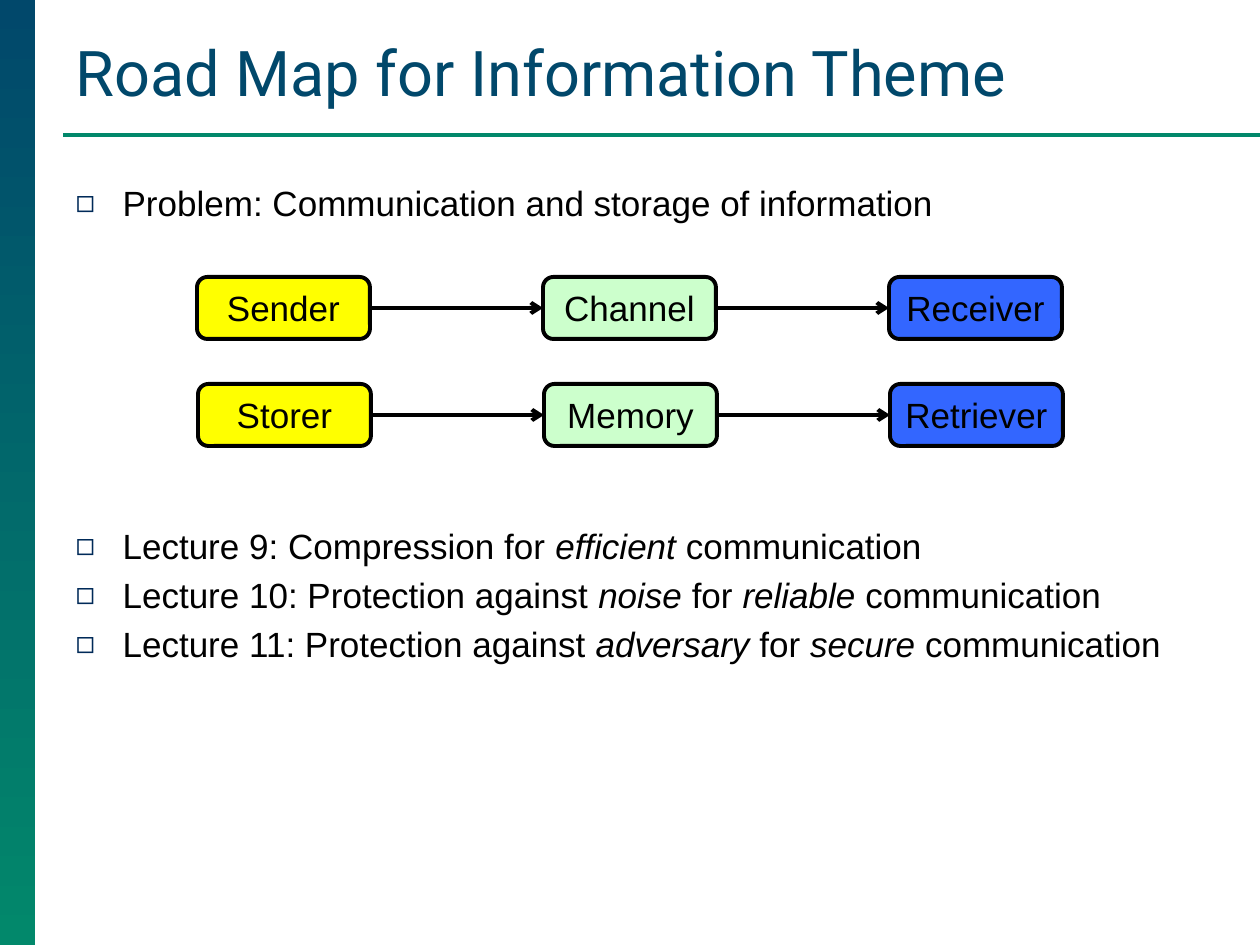
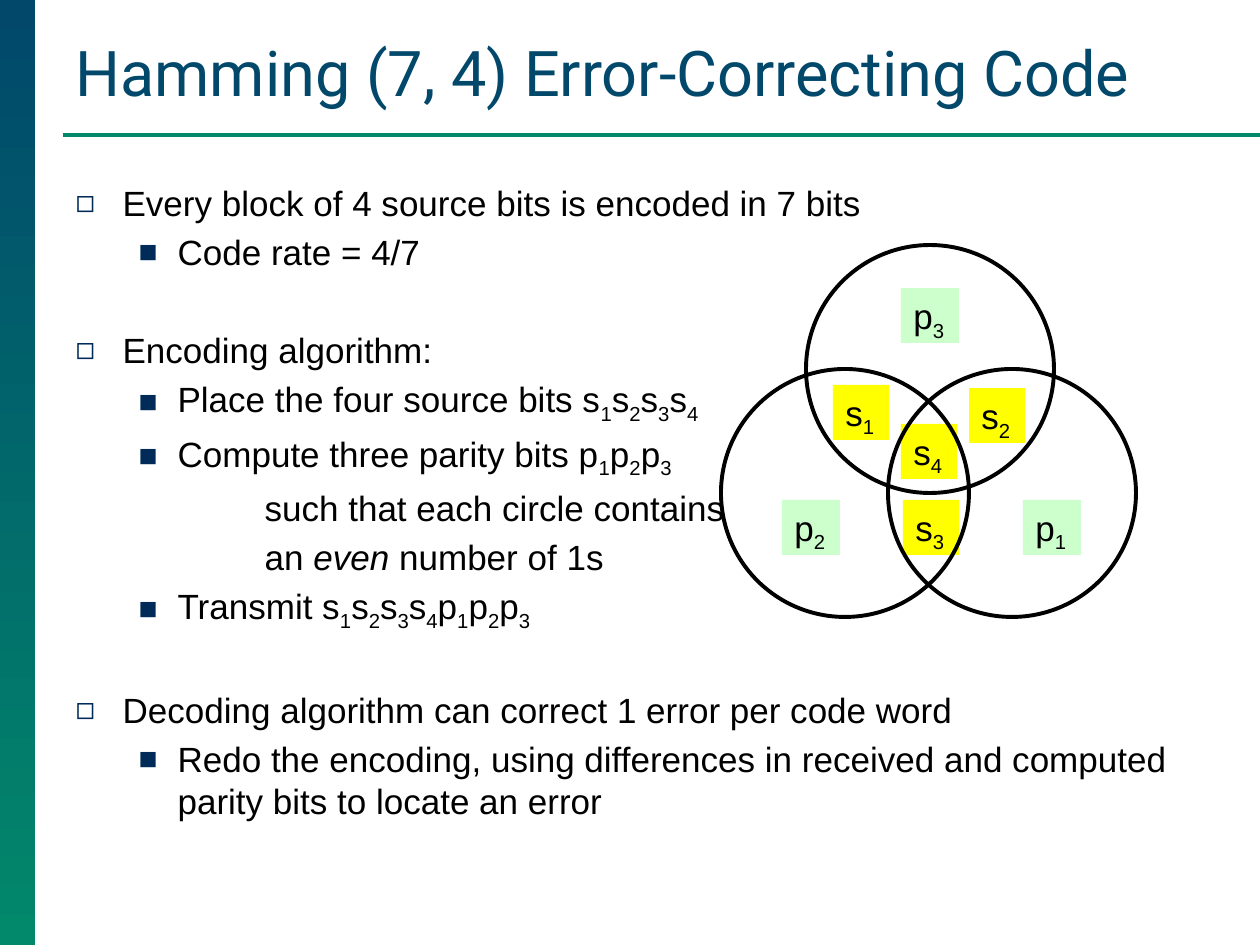
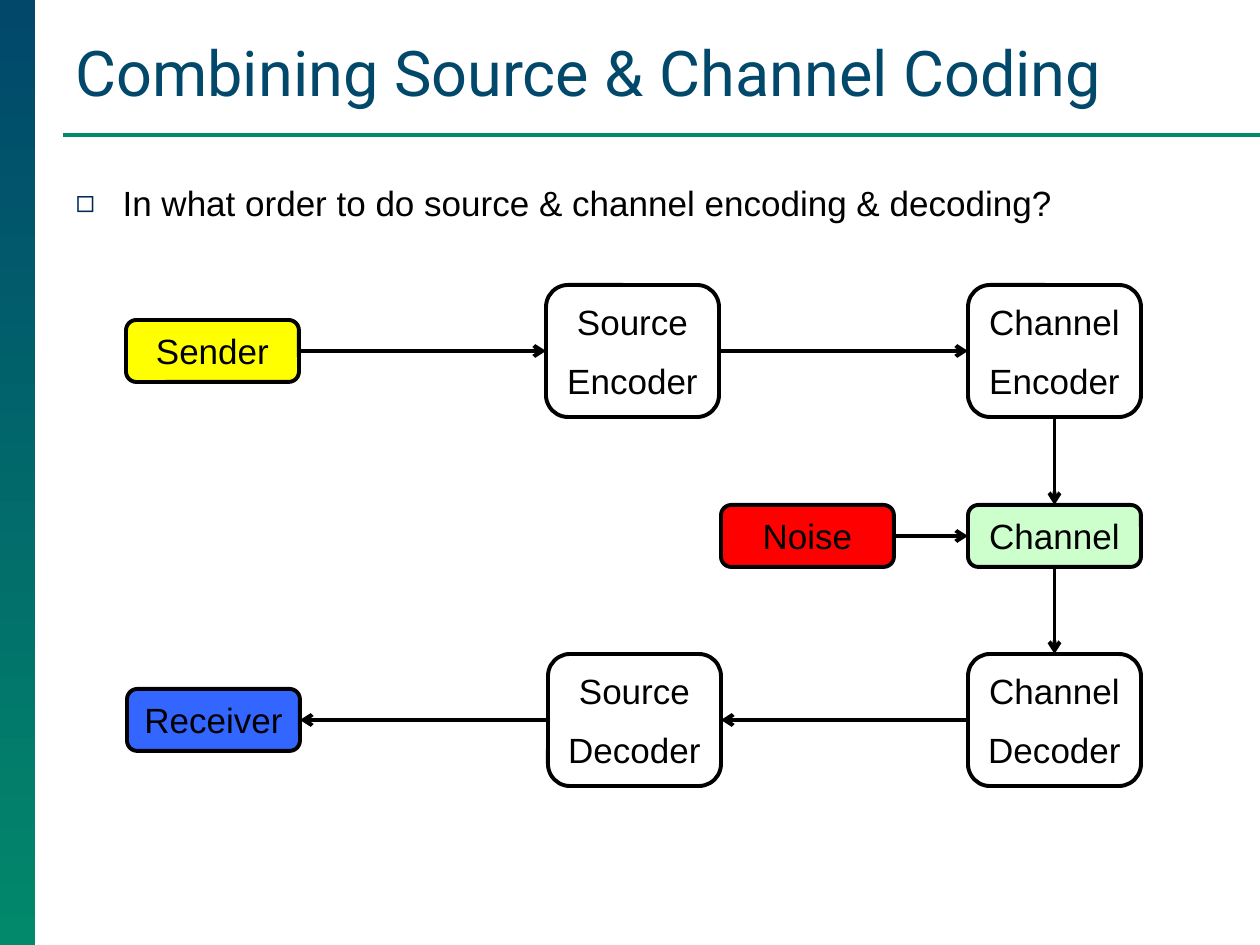
import pptx
import pptx.util
import pptx.dml.color
import pptx.enum.dml
import pptx.enum.shapes
import pptx.enum.text
import pptx.oxml.ns
from dataclasses import dataclass
from lxml import etree

SHAPE = pptx.enum.shapes.MSO_SHAPE
ANCHOR = pptx.enum.text.MSO_ANCHOR
ALIGN = pptx.enum.text.PP_ALIGN
qn = pptx.oxml.ns.qn


@dataclass(frozen=True)
class Theme:
    navy: str = "01486B"
    green: str = "02886B"
    mark: str = "002A58"
    black: str = "000000"
    white: str = "FFFFFF"
    yellow: str = "FFFF00"
    mint: str = "CCFFCC"
    blue: str = "3366FF"
    red: str = "FF0000"
    head: str = "Roboto"
    face: str = "Arial"
    big: int = 36
    size: int = 20
    line: float = 2.25
    pitch: int = 28   # points from one list line to the next
    tight: int = 4    # space before a list line
    loose: int = 10   # space between lines in a box


T = Theme()

# ---- Content ----
# In text, *word* is italic and _1_ is a subscript.
# List lines: kind, text, empty lines above.
ROAD = dict(
    title="Road Map for Information Theme",
    list=[
        ("main", "Problem: Communication and storage of information", 0),
        ("main", "Lecture 9: Compression for *efficient* communication", 6),
        ("main", "Lecture 10: Protection against *noise* for *reliable* communication", 0),
        ("main", "Lecture 11: Protection against *adversary* for *secure* communication", 0),
    ],
    rows=[(197, 277, ("Sender", "Channel", "Receiver")),
          (198, 384, ("Storer", "Memory", "Retriever"))],
)
CODE = dict(
    title="Hamming (7, 4) Error-Correcting Code",
    list=[
        ("main", "Every block of 4 source bits is encoded in 7 bits", 0),
        ("sub", "Code rate = 4/7", 0),
        ("main", "Encoding algorithm:", 1),
        ("sub", "Place the four source bits s_1_s_2_s_3_s_4_", 0),
        ("sub", "Compute three parity bits p_1_p_2_p_3_", 0),
        ("more", "such that each circle contains", 0),
        ("more", "an *even* number of 1s", 0),
        ("sub", "Transmit s_1_s_2_s_3_s_4_p_1_p_2_p_3_", 0),
        ("main", "Decoding algorithm can correct 1 error per code word", 1),
        ("sub", "Redo the encoding, using differences in received and "
                "computed parity bits to locate an error", 0),
    ],
    tags=[("s_4_", 901, 424), ("s_1_", 833, 385), ("s_3_", 903, 500), ("s_2_", 969, 388),
          ("p_1_", 1023, 500), ("p_3_", 901, 288), ("p_2_", 782, 500)],
    rings=[(806, 245), (721, 369), (888, 369)],
)
FLOW = dict(
    title="Combining Source & Channel Coding",
    list=[("main", "In what order to do source & channel encoding & decoding?", 0)],
    boxes=[("Sender", 126, 320, T.yellow), ("Receiver", 127, 689, T.blue),
           ("Noise", 721, 505, T.red), ("Channel", 968, 505, T.mint),
           ("Source\nEncoder", 546, 285, None), ("Source\nDecoder", 548, 654, T.white),
           ("Channel\nEncoder", 968, 285, None), ("Channel\nDecoder", 968, 654, T.white)],
    links=[("Sender", 3, "Source\nEncoder", 1),
           ("Source\nEncoder", 3, "Channel\nEncoder", 1),
           ("Channel\nEncoder", 2, "Channel", 0),
           ("Noise", 3, "Channel", 1),
           ("Channel", 2, "Channel\nDecoder", 0),
           ("Channel\nDecoder", 1, "Source\nDecoder", 3),
           ("Source\nDecoder", 1, "Receiver", 3)],
)

# ---- Layout, in px ----
WIDE, HIGH = 1260, 945
BOX_W, STEP = 173, 346
BOX_H = {1: 62, 2: 132}   # by number of text lines
BOX_PAD = 6               # left and right, so the longest label fits one line
RING = 248
TAG_W, TAG_H = {"s": 56, "p": 58}, 55
# Kind of list line: level, left margin, first-line indent, bullet
KINDS = {"main": (0, 47, -47, "◻"), "sub": (1, 102, -39, "■"), "more": (1, 189, 0, None)}


def px(n):
    return round(n * 914400 / 126)


def rgb(code):
    return pptx.dml.color.RGBColor.from_string(code)


# ---- Text ----
def put(para, text, size=T.size, face=T.face, color=T.black, align=ALIGN.LEFT, before=0):
    para.alignment = align
    para.space_before = pptx.util.Pt(before)
    for i, part in enumerate(text.split("*")):
        for j, bit in enumerate(part.split("_")):
            if not bit:
                continue
            run = para.add_run()
            run.text = bit
            run.font.size = pptx.util.Pt(size)
            run.font.name = face
            run.font.color.rgb = rgb(color)
            if i % 2:
                run.font.italic = True
            if j % 2:
                run._r.get_or_add_rPr().set("baseline", "-25000")


def lines(frame, count):
    return [frame.paragraphs[0]] + [frame.add_paragraph() for _ in range(count - 1)]


def bullet(para, kind):
    level, left, indent, char = KINDS[kind]
    para.level = level
    props = para._p.get_or_add_pPr()
    props.set("marL", str(px(left)))
    props.set("indent", str(px(indent)))
    if char is None:
        etree.SubElement(props, qn("a:buNone"))
        return
    tint = etree.SubElement(props, qn("a:buClr"))
    etree.SubElement(tint, qn("a:srgbClr"), val=T.mark)
    etree.SubElement(props, qn("a:buSzPct"), val="90000")
    etree.SubElement(props, qn("a:buChar"), char=char)


# ---- Shapes ----
def shape(slide, kind, x, y, w, h, fill=None, edge=None):
    item = slide.shapes.add_shape(kind, px(x), px(y), px(w), px(h))
    item.shadow.inherit = False
    if fill:
        item.fill.solid()
        item.fill.fore_color.rgb = rgb(fill)
    else:
        item.fill.background()
    if edge:
        item.line.color.rgb = rgb(edge)
        item.line.width = pptx.util.Pt(T.line)
    else:
        item.line.fill.background()
    return item


def box(slide, text, x, y, fill):
    parts = text.split("\n")
    item = shape(slide, SHAPE.ROUNDED_RECTANGLE, x, y, BOX_W, BOX_H[len(parts)], fill, T.black)
    frame = item.text_frame
    frame.word_wrap = True
    frame.margin_left = frame.margin_right = px(BOX_PAD)
    frame.vertical_anchor = ANCHOR.MIDDLE
    for i, para in enumerate(lines(frame, len(parts))):
        put(para, parts[i], align=ALIGN.CENTER, before=T.loose if i else 0)
    return item


def tag(slide, text, x, y):
    fill = T.yellow if text[0] == "s" else T.mint
    frame = shape(slide, SHAPE.RECTANGLE, x, y, TAG_W[text[0]], TAG_H, fill).text_frame
    frame.word_wrap = False
    frame.vertical_anchor = ANCHOR.TOP
    put(frame.paragraphs[0], text)


def rule(slide, x1, y1, x2, y2, color):
    item = slide.shapes.add_connector(pptx.enum.shapes.MSO_CONNECTOR.STRAIGHT,
                                      px(x1), px(y1), px(x2), px(y2))
    item.line.color.rgb = rgb(color)
    item.line.width = pptx.util.Pt(T.line)
    etree.SubElement(item.element.spPr, qn("a:effectLst"))
    return item


def arrow(slide, start, out, end, into):
    item = rule(slide, 0, 0, 0, 0, T.black)
    item.begin_connect(start, out)
    item.end_connect(end, into)
    etree.SubElement(item.line._get_or_add_ln(), qn("a:tailEnd"), type="arrow")


# ---- Shared look ----
def place(item, x, y, w, h):
    item.left, item.top, item.width, item.height = px(x), px(y), px(w), px(h)


def dress(layout, slide):
    """Set the layout's places and move the band and rule from a slide into it."""
    place(layout.placeholders[0], 63, 26, 1169, 89)
    place(layout.placeholders[1], 63, 175, 1124, 694)
    band = shape(slide, SHAPE.RECTANGLE, 0, 0, 35, HIGH)
    band.fill.gradient()
    band.fill.gradient_angle = 270
    for stop, color in zip(band.fill.gradient_stops, (T.navy, T.green)):
        stop.color.rgb = rgb(color)
    for i, item in enumerate((band, rule(slide, 63, 135, WIDE, 135, T.green))):
        item.element.xpath(".//p:cNvPr")[0].set("id", str(20 + i))
        layout.shapes.element.append(item.element)


def start(deck, data):
    slide = deck.slides.add_slide(deck.slide_layouts[1])
    head = slide.shapes.title.text_frame
    body = slide.placeholders[1].text_frame
    for frame, anchor in ((head, ANCHOR.BOTTOM), (body, ANCHOR.TOP)):
        frame.word_wrap = True
        frame.auto_size = pptx.enum.text.MSO_AUTO_SIZE.NONE
        frame.vertical_anchor = anchor
    put(head.paragraphs[0], data["title"], size=T.big, face=T.head, color=T.navy)
    rows = data["list"]
    for i, (para, (kind, text, gap)) in enumerate(zip(lines(body, len(rows)), rows)):
        bullet(para, kind)
        put(para, text, before=T.tight + gap * T.pitch if i else 0)
    return slide


# ---- Slides ----
def road(deck):
    slide = start(deck, ROAD)
    dress(deck.slide_layouts[1], slide)
    for left, top, names in ROAD["rows"]:
        row = [box(slide, name, left + i * STEP, top, fill)
               for i, (name, fill) in enumerate(zip(names, (T.yellow, T.mint, T.blue)))]
        for a, b in zip(row, row[1:]):
            arrow(slide, a, 3, b, 1)


def code(deck):
    slide = start(deck, CODE)
    for text, x, y in CODE["tags"]:
        tag(slide, text, x, y)
    for x, y in CODE["rings"]:
        shape(slide, SHAPE.OVAL, x, y, RING, RING, edge=T.black)


def flow(deck):
    slide = start(deck, FLOW)
    boxes = {text: box(slide, text, x, y, fill) for text, x, y, fill in FLOW["boxes"]}
    for a, out, b, into in FLOW["links"]:
        arrow(slide, boxes[a], out, boxes[b], into)


def main():
    deck = pptx.Presentation()
    deck.slide_width, deck.slide_height = px(WIDE), px(HIGH)
    for build in (road, code, flow):
        build(deck)
    deck.save("out.pptx")


if __name__ == "__main__":
    main()
